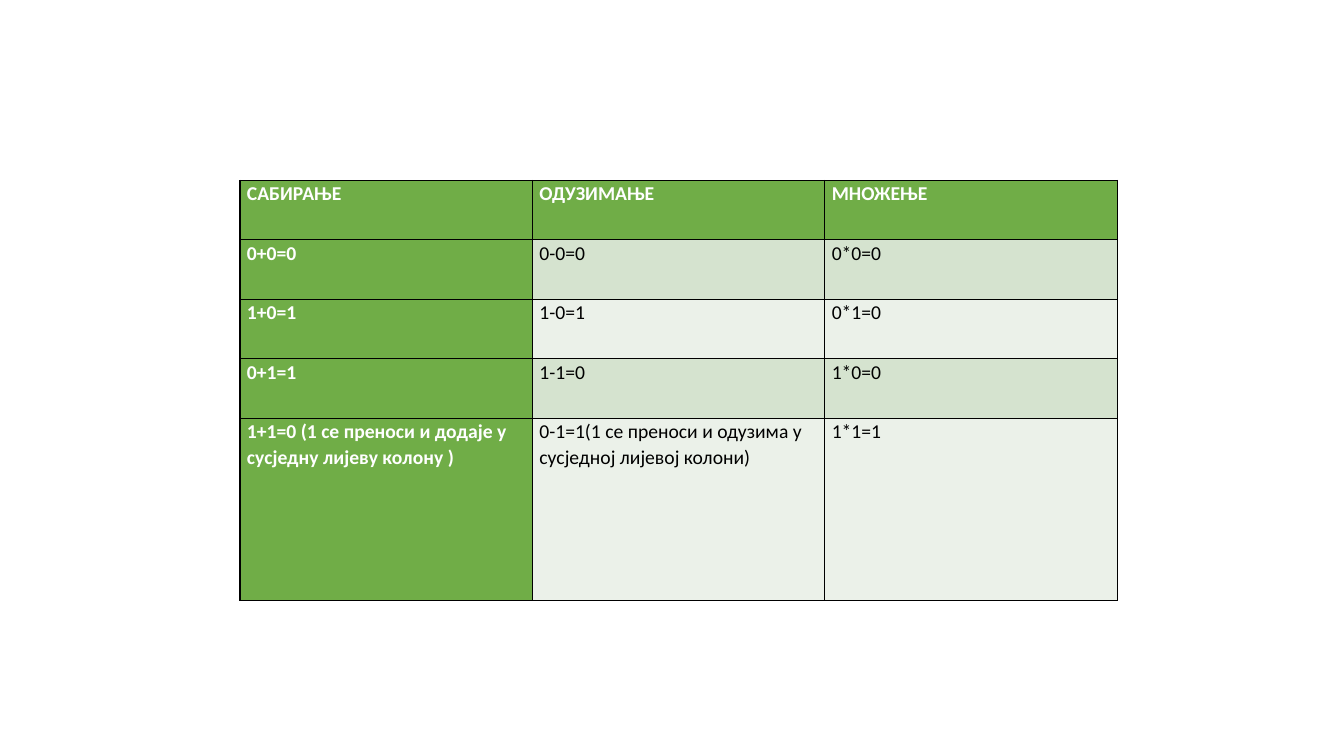
from pptx import Presentation
from pptx.dml.color import RGBColor as RGB
from pptx.oxml import parse_xml
from pptx.oxml.ns import nsdecls
from pptx.util import Inches, Pt

GREEN = RGB(0x70, 0xAD, 0x47)
BANDS = [RGB(0xD5, 0xE3, 0xCF), RGB(0xEB, 0xF1, 0xE9)]
WHITE = RGB(0xFF, 0xFF, 0xFF)
BLACK = RGB(0, 0, 0)

ROWS = [
    ["САБИРАЊЕ", "ОДУЗИМАЊЕ", "МНОЖЕЊЕ"],
    ["0+0=0", "0-0=0", "0*0=0"],
    ["1+0=1", "1-0=1", "0*1=0"],
    ["0+1=1", "1-1=0", "1*0=0"],
    ["1+1=0 (1 се преноси и додаје у сусједну лијеву колону )",
     "0-1=1(1 се преноси и одузима у сусједној лијевој колони)",
     "1*1=1"],
]
ROW_H = 0.59


def add_borders(cell):
    props = cell._tc.get_or_add_tcPr()
    # Borders come before the fill in the cell properties
    for i, side in enumerate(("lnL", "lnR", "lnT", "lnB")):
        props.insert(i, parse_xml(
            f'<a:{side} {nsdecls("a")} w="{Pt(1)}"><a:solidFill>'
            f'<a:srgbClr val="{BLACK}"/></a:solidFill></a:{side}>'))


def fill_cell(cell, text, fill, color, bold):
    cell.fill.solid()
    cell.fill.fore_color.rgb = fill
    cell.margin_left = cell.margin_right = Inches(0.07)
    cell.margin_top = cell.margin_bottom = 0
    para = cell.text_frame.paragraphs[0]
    para.line_spacing = 1.07
    run = para.add_run()
    run.text = text
    font = run.font
    font.name, font.size, font.bold = "Calibri", Pt(14), bold
    font.color.rgb = color
    add_borders(cell)


def add_rules(slide, left, top, width, height):
    """Table of binary sums, differences and products."""
    count = len(ROWS[0])
    table = slide.shapes.add_table(
        len(ROWS), count, Inches(left), Inches(top),
        Inches(width), Inches(height)).table
    for col in table.columns:
        col.width = Inches(width / count)

    # Equal rows, the last one takes the rest
    for row in table.rows:
        row.height = Inches(ROW_H)
    table.rows[len(ROWS) - 1].height = Inches(height - ROW_H * (len(ROWS) - 1))

    # Green header row and first column, banded body
    for r, texts in enumerate(ROWS):
        for c, text in enumerate(texts):
            head = r == 0 or c == 0
            fill = GREEN if head else BANDS[(r - 1) % 2]
            fill_cell(table.cell(r, c), text, fill,
                      WHITE if head else BLACK, head)


def main():
    prs = Presentation()
    prs.slide_width, prs.slide_height = Inches(13.33), Inches(7.5)
    slide = prs.slides.add_slide(prs.slide_layouts[6])
    add_rules(slide, 2.38, 1.79, 8.7, 4.17)
    prs.save("out.pptx")


if __name__ == "__main__":
    main()
